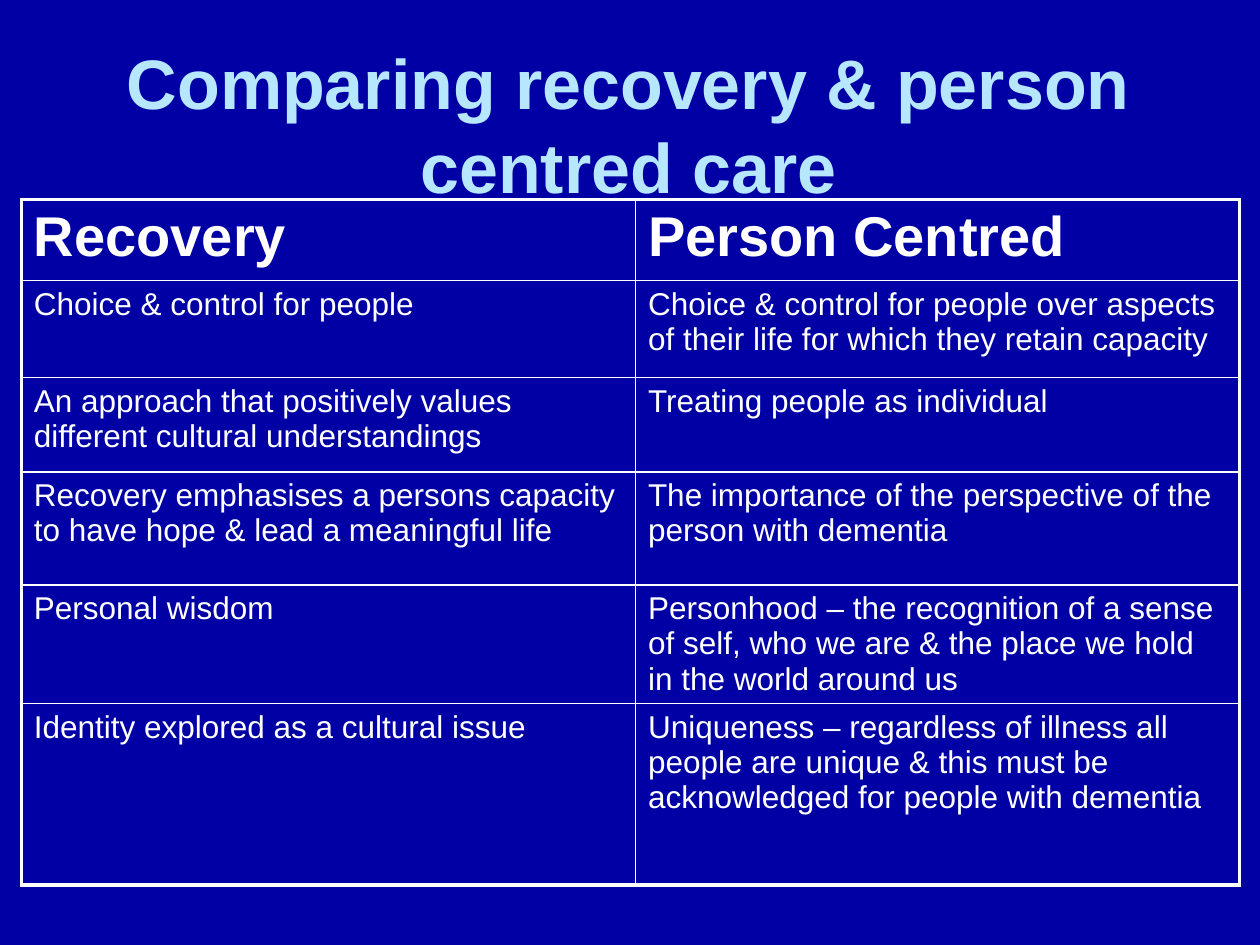
from dataclasses import dataclass
from typing import NamedTuple

from lxml import etree
from pptx import Presentation
from pptx.dml.color import RGBColor
from pptx.enum.text import MSO_ANCHOR, MSO_AUTO_SIZE, PP_ALIGN
from pptx.oxml.ns import qn
from pptx.util import Cm, Pt

CENTER, LEFT = PP_ALIGN.CENTER, PP_ALIGN.LEFT
MIDDLE = MSO_ANCHOR.MIDDLE
NO_AUTOFIT = MSO_AUTO_SIZE.NONE
TITLE_ONLY = 5


@dataclass(frozen=True)
class Theme:
    background: str = "0000A4"
    heading: str = "B7E7FF"
    text: str = "FFFFFF"
    font: str = "Arial"
    title_size: float = 40
    header_size: float = 32
    body_size: float = 18
    outer_line: float = 2.25
    inner_line: float = 1


class Comparison(NamedTuple):
    recovery: str
    person_centred: str
    height: float  # cm


THEME = Theme()
COLUMN_WIDTHS = (12.38, 12.18)  # cm
COMPARISONS = [
    Comparison("Recovery", "Person Centred", 1.63),
    Comparison("Choice & control for people",
               "Choice & control for people over aspects of their life for "
               "which they retain capacity", 1.96),
    Comparison("An approach that positively values different cultural understandings",
               "Treating people as individual", 1.9),
    Comparison("Recovery emphasises a persons capacity to have hope & lead a meaningful life",
               "The importance of the perspective of the person with dementia", 2.28),
    Comparison("Personal wisdom",
               "Personhood – the recognition of a sense of self, who we are & "
               "the place we hold in the world around us", 2.24),
    Comparison("Identity explored as a cultural issue",
               "Uniqueness – regardless of illness all people are unique & "
               "this must be acknowledged for people with dementia", 3.66),
]


def write(frame, text: str, size: float, color: str, bold: bool, align) -> None:
    """Put one formatted paragraph in a text frame."""
    frame.text = text
    paragraph = frame.paragraphs[0]
    paragraph.alignment = align
    font = paragraph.runs[0].font
    for attribute, value in {"name": THEME.font, "size": Pt(size), "bold": bold}.items():
        setattr(font, attribute, value)
    font.color.rgb = RGBColor.from_string(color)


def set_borders(cell, widths: dict[str, float]) -> None:
    """Draw cell borders; they must precede the fill in the cell properties."""
    properties = cell._tc.get_or_add_tcPr()
    for position, (side, width) in enumerate(widths.items()):
        line = etree.Element(qn(f"a:ln{side}"), w=str(Pt(width)))
        fill = etree.SubElement(line, qn("a:solidFill"))
        etree.SubElement(fill, qn("a:srgbClr"), val=THEME.text)
        properties.insert(position, line)


def add_title(slide, text: str) -> None:
    title = slide.shapes.title
    box = {"left": Cm(0.84), "top": Cm(0.64), "width": Cm(23.65), "height": Cm(3.68)}
    for attribute, value in box.items():
        setattr(title, attribute, value)
    frame = title.text_frame
    for attribute, value in {"word_wrap": True, "auto_size": NO_AUTOFIT,
                             "vertical_anchor": MIDDLE}.items():
        setattr(frame, attribute, value)
    write(frame, text, THEME.title_size, THEME.heading, True, CENTER)


def add_comparison_table(slide, comparisons: list[Comparison]) -> None:
    last_row, last_column = len(comparisons) - 1, len(COLUMN_WIDTHS) - 1
    table = slide.shapes.add_table(
        len(comparisons), len(COLUMN_WIDTHS), Cm(0.43), Cm(4.02),
        Cm(sum(COLUMN_WIDTHS)), Cm(sum(c.height for c in comparisons))).table
    table.first_row = table.horz_banding = False
    for column, width in zip(table.columns, COLUMN_WIDTHS):
        column.width = Cm(width)

    for r, comparison in enumerate(comparisons):
        table.rows[r].height = Cm(comparison.height)
        is_header = r == 0
        size = THEME.header_size if is_header else THEME.body_size
        for c, text in enumerate((comparison.recovery, comparison.person_centred)):
            cell = table.cell(r, c)
            write(cell.text_frame, text, size, THEME.text, is_header, LEFT)
            cell.fill.background()
            # Thick lines only on the outer edge
            on_edge = {"L": c == 0, "R": c == last_column,
                       "T": r == 0, "B": r == last_row}
            set_borders(cell, {side: THEME.outer_line if edge else THEME.inner_line
                               for side, edge in on_edge.items()})


def main() -> None:
    deck = Presentation()
    deck.slide_width, deck.slide_height = Cm(25.4), Cm(19.05)
    slide = deck.slides.add_slide(deck.slide_layouts[TITLE_ONLY])

    # Background
    background = slide.background.fill
    background.solid()
    background.fore_color.rgb = RGBColor.from_string(THEME.background)

    # Title and table
    add_title(slide, "Comparing recovery & person centred care")
    add_comparison_table(slide, COMPARISONS)
    deck.save("out.pptx")


if __name__ == "__main__":
    main()
